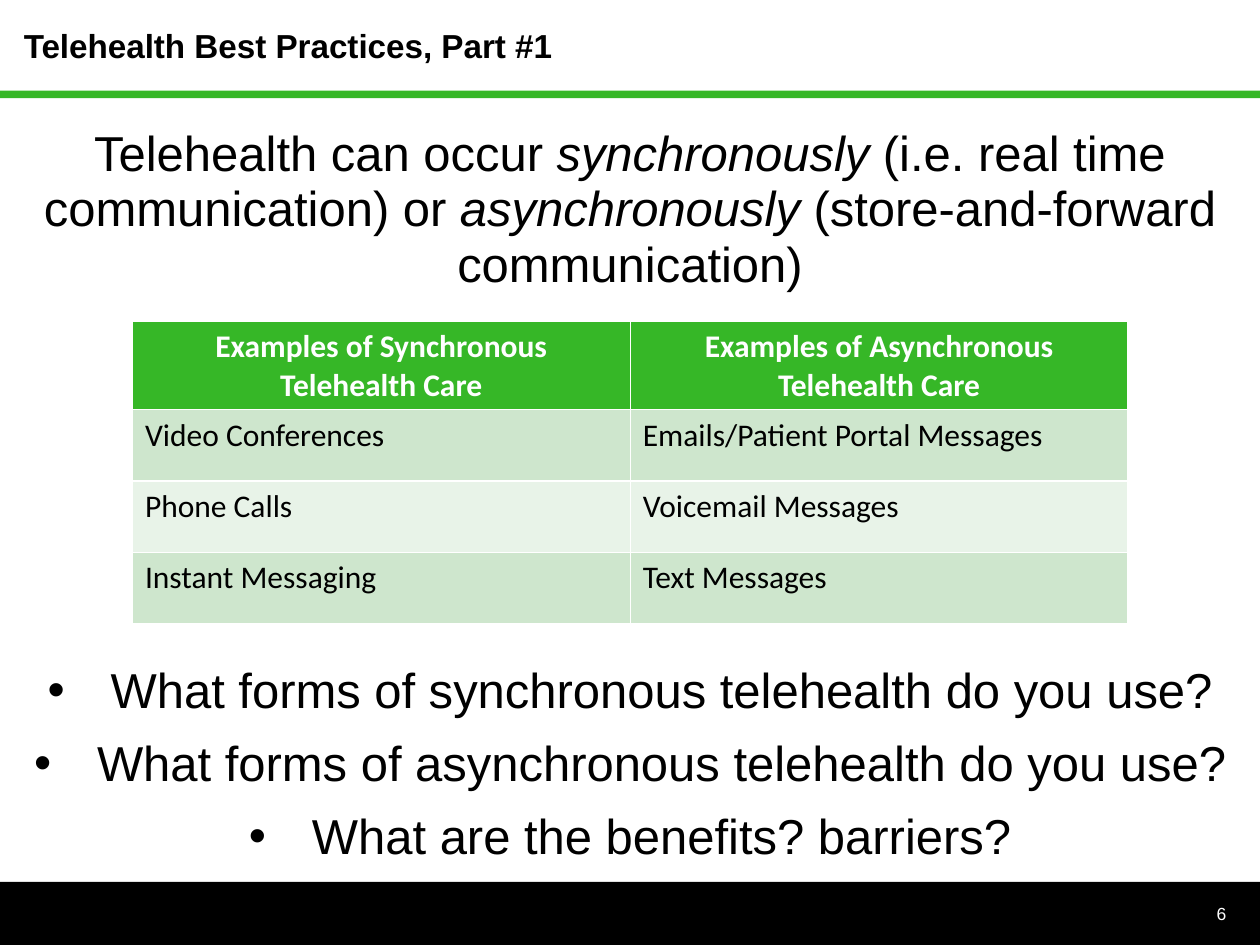
from dataclasses import dataclass

from lxml import etree
from pptx import Presentation
from pptx.dml.color import RGBColor
from pptx.enum.shapes import MSO_SHAPE
from pptx.enum.text import MSO_ANCHOR, PP_ALIGN
from pptx.oxml.ns import qn
from pptx.util import Cm, Pt

RECTANGLE = MSO_SHAPE.RECTANGLE
TOP, MIDDLE = MSO_ANCHOR.TOP, MSO_ANCHOR.MIDDLE
LEFT, CENTER, RIGHT = PP_ALIGN.LEFT, PP_ALIGN.CENTER, PP_ALIGN.RIGHT

GREEN, BLACK, WHITE = "36B727", "000000", "FFFFFF"
ROW_FILLS = ["CEE6CD", "E8F3E8"]
BODY_SPACING = 0.94
QUESTION_GAP = 10
TABLE_GAP = 212


@dataclass(frozen=True)
class Area:
    left: float
    top: float
    width: float
    height: float

    def lengths(self) -> tuple:
        return Cm(self.left), Cm(self.top), Cm(self.width), Cm(self.height)


@dataclass(frozen=True)
class Style:
    size: int
    color: str = BLACK
    name: str = "Arial"
    bold: bool = False
    align: PP_ALIGN = LEFT


TITLE = Style(19, bold=True)
BODY = Style(28, align=CENTER)
PAGE_NUMBER = Style(10, WHITE, align=RIGHT)
HEADER = Style(18, WHITE, "Calibri", True, CENTER)
CELL = Style(18, name="Calibri")

BANDS = [
    (Area(0, 17.78, 25.4, 1.27), BLACK),
    (Area(0, 1.83, 25.4, 0.15), GREEN),
]
INTRO = [
    ("Telehealth can occur ", False),
    ("synchronously", True),
    (" (i.e. real time communication) or ", False),
    ("asynchronously", True),
    (" (store-and-forward communication)", False),
]
QUESTIONS = [
    "What forms of synchronous telehealth do you use?",
    "What forms of asynchronous telehealth do you use?",
    "What are the benefits? barriers?",
]
EXAMPLES = [
    ("Examples of Synchronous Telehealth Care", "Examples of Asynchronous Telehealth Care"),
    ("Video Conferences", "Emails/Patient Portal Messages"),
    ("Phone Calls", "Voicemail Messages"),
    ("Instant Messaging", "Text Messages"),
]


def paint(target, color: str) -> None:
    target.fill.solid()
    target.fill.fore_color.rgb = RGBColor.from_string(color)


def apply_style(para, style: Style) -> None:
    para.alignment = style.align
    para.font.size = Pt(style.size)
    para.font.name = style.name
    para.font.bold = style.bold
    para.font.color.rgb = RGBColor.from_string(style.color)


def add_band(page, area: Area, color: str) -> None:
    band = page.shapes.add_shape(RECTANGLE, *area.lengths())
    band.shadow.inherit = False
    paint(band, color)
    band.line.fill.background()


def add_frame(page, area: Area, anchor: MSO_ANCHOR):
    frame = page.shapes.add_textbox(*area.lengths()).text_frame
    frame.word_wrap = True
    frame.vertical_anchor = anchor
    return frame


def add_line(page, area: Area, text: str, style: Style):
    frame = add_frame(page, area, MIDDLE)
    frame.text = text
    apply_style(frame.paragraphs[0], style)
    return frame


def add_bullet(para) -> None:
    properties = para._p.get_or_add_pPr()
    properties.set("marL", str(Cm(1.27)))
    properties.set("indent", str(-Cm(1.27)))
    etree.SubElement(properties, qn("a:buFont"), typeface="Arial")
    etree.SubElement(properties, qn("a:buChar"), char="•")


def add_body(page, area: Area) -> None:
    frame = add_frame(page, area, TOP)
    intro = frame.paragraphs[0]
    for text, italic in INTRO:
        span = intro.add_run()
        span.text = text
        span.font.italic = italic
    for index, text in enumerate(QUESTIONS):
        para = frame.add_paragraph()
        para.text = text
        add_bullet(para)
        para.space_before = Pt(QUESTION_GAP if index else TABLE_GAP)
    for para in frame.paragraphs:
        para.line_spacing = BODY_SPACING
        apply_style(para, BODY)


def add_examples(page, area: Area) -> None:
    table = page.shapes.add_table(len(EXAMPLES), 2, *area.lengths()).table
    for row_index, texts in enumerate(EXAMPLES):
        is_header = row_index == 0
        table.rows[row_index].height = Cm(1.73 if is_header else 1.44)
        for column, text in enumerate(texts):
            cell = table.cell(row_index, column)
            cell.text = text
            paint(cell, GREEN if is_header else ROW_FILLS[(row_index - 1) % 2])
            apply_style(cell.text_frame.paragraphs[0], HEADER if is_header else CELL)


def main() -> None:
    deck = Presentation()
    deck.slide_width, deck.slide_height = Cm(25.4), Cm(19.05)
    page = deck.slides.add_slide(deck.slide_layouts[6])
    for area, color in BANDS:
        add_band(page, area, color)
    title = add_line(page, Area(0.23, 0.13, 24.77, 2.31), "Telehealth Best Practices, Part #1", TITLE)
    title.margin_bottom = Cm(0.86)
    add_body(page, Area(0, 2.44, 25.4, 14.91))
    add_line(page, Area(23.9, 17.91, 1.07, 1.02), "6", PAGE_NUMBER)
    add_examples(page, Area(2.67, 6.48, 20.07, 6.05))
    deck.save("out.pptx")


if __name__ == "__main__":
    main()
